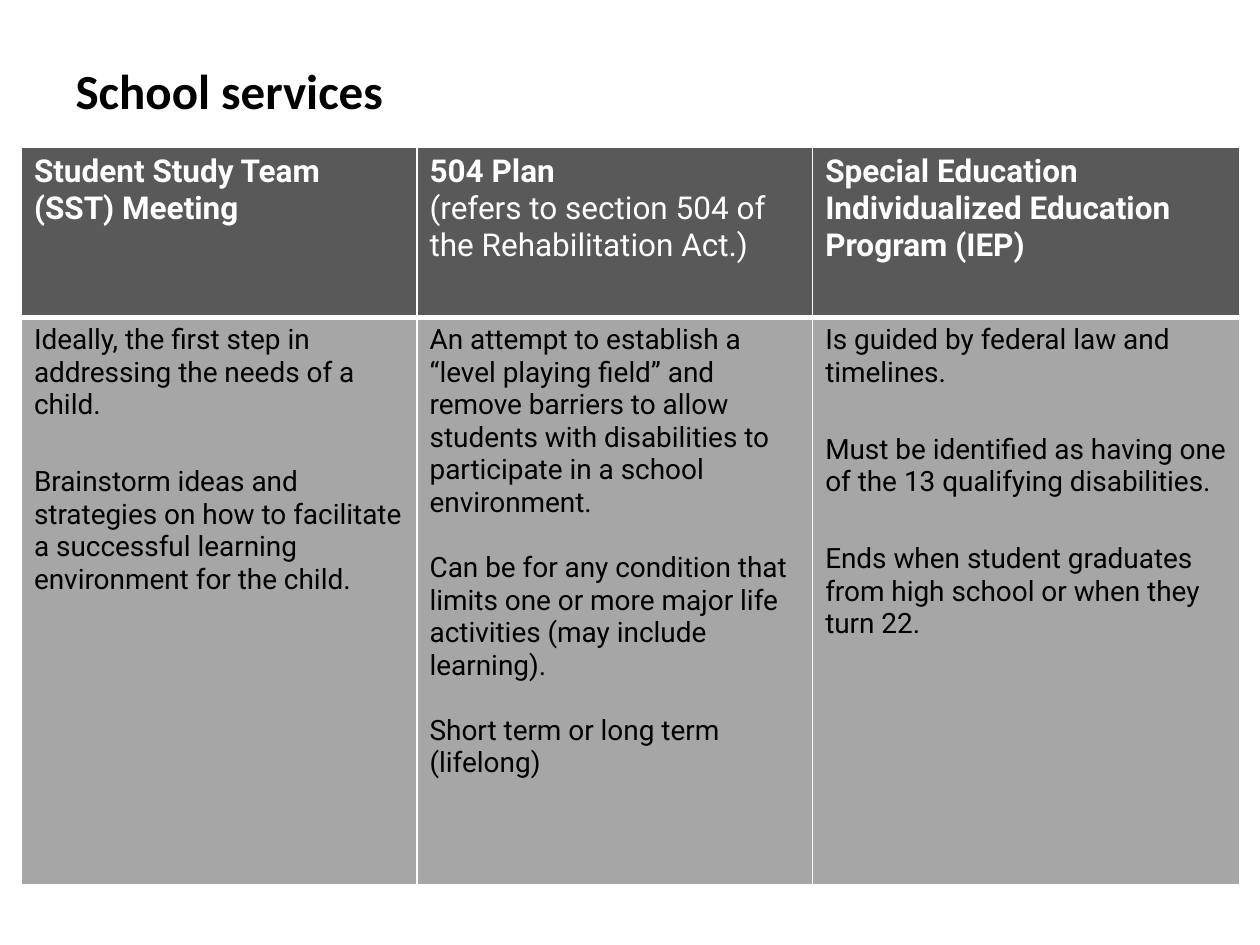
from pptx import Presentation, util as u
from pptx.dml import color
from pptx.enum import text
from pptx.oxml import ns
from lxml import etree

COLORS = {"title": "000000", "header": "595959", "header_text": "FFFFFF",
          "body": "A6A6A6", "body_text": "000000", "border": "FFFFFF"}


def add_text(paragraph, content, color_name, formats):
    run = paragraph.add_run()
    run.text = content
    for name, value in formats.items():
        setattr(run.font, name, value)
    run.font.color.rgb = color.RGBColor.from_string(COLORS[color_name])


def set_borders(cell, widths):
    properties = cell._tc.get_or_add_tcPr()
    for side, width in widths.items():
        line = etree.SubElement(properties, ns.qn(f"a:ln{side}"), w=str(u.Pt(width)))
        fill = etree.SubElement(line, ns.qn("a:solidFill"))
        etree.SubElement(fill, ns.qn("a:srgbClr"), val=COLORS["border"])


presentation = Presentation()
presentation.slide_width = u.Inches(10)
presentation.slide_height = u.Inches(7.5)
slide = presentation.slides.add_slide(presentation.slide_layouts[5])

title = slide.shapes.title
title_box = {"left": 0.5, "top": 0.24, "width": 7.08, "height": 0.76}
for name, value in title_box.items():
    setattr(title, name, u.Inches(value))
title.text_frame.vertical_anchor = text.MSO_ANCHOR.BOTTOM
paragraph = title.text_frame.paragraphs[0]
paragraph.alignment = text.PP_ALIGN.LEFT
add_text(paragraph, "School services", "title",
         {"name": "Calibri", "size": u.Pt(28), "bold": True})

services = [
    {"header": ["Student Study Team (SST) Meeting"],
     "gap": 25.4,
     "body": ["Ideally, the first step in addressing the needs of a child.",
              "Brainstorm ideas and strategies on how to facilitate a successful "
              "learning environment for the child."]},
    {"header": ["504 Plan", "(refers to section 504 of the Rehabilitation Act.)"],
     "gap": 18.6,
     "body": ["An attempt to establish a “level playing field” and remove barriers to "
              "allow students with disabilities to participate in a school environment.",
              "Can be for any condition that limits one or more major life activities "
              "(may include learning).",
              "Short term or long term (lifelong)"]},
    {"header": ["Special Education Individualized Education Program (IEP)"],
     "gap": 25.4,
     "body": ["Is guided by federal law and timelines.",
              "Must be identified as having one of the 13 qualifying disabilities.",
              "Ends when student graduates from high school or when they turn 22."]},
]
row_styles = [
    {"part": "header", "size": 18, "borders": {"L": 1, "R": 1, "T": 1, "B": 3}},
    {"part": "body", "size": 16, "borders": {"L": 1, "R": 1, "T": 3, "B": 1}},
]

table = slide.shapes.add_table(len(row_styles), len(services), u.Inches(0.17),
                               u.Inches(1.17), u.Inches(9.67), u.Inches(5.85)).table
for column, width in zip(table.columns, [3.14, 3.14, 3.39]):
    column.width = u.Inches(width)
for row, height in zip(table.rows, [1.35, 4.5]):
    row.height = u.Inches(height)

for row_index, style in enumerate(row_styles):
    part = style["part"]
    for column_index, service in enumerate(services):
        cell = table.cell(row_index, column_index)
        set_borders(cell, style["borders"])
        cell.fill.solid()
        cell.fill.fore_color.rgb = color.RGBColor.from_string(COLORS[part])
        for index, content in enumerate(service[part]):
            frame = cell.text_frame
            paragraph = frame.add_paragraph() if index else frame.paragraphs[0]
            if index and part == "body":
                paragraph.space_before = u.Pt(service["gap"])
            add_text(paragraph, content, f"{part}_text",
                     {"name": "Roboto", "size": u.Pt(style["size"]),
                      "bold": part == "header" and index == 0})

presentation.save("out.pptx")
